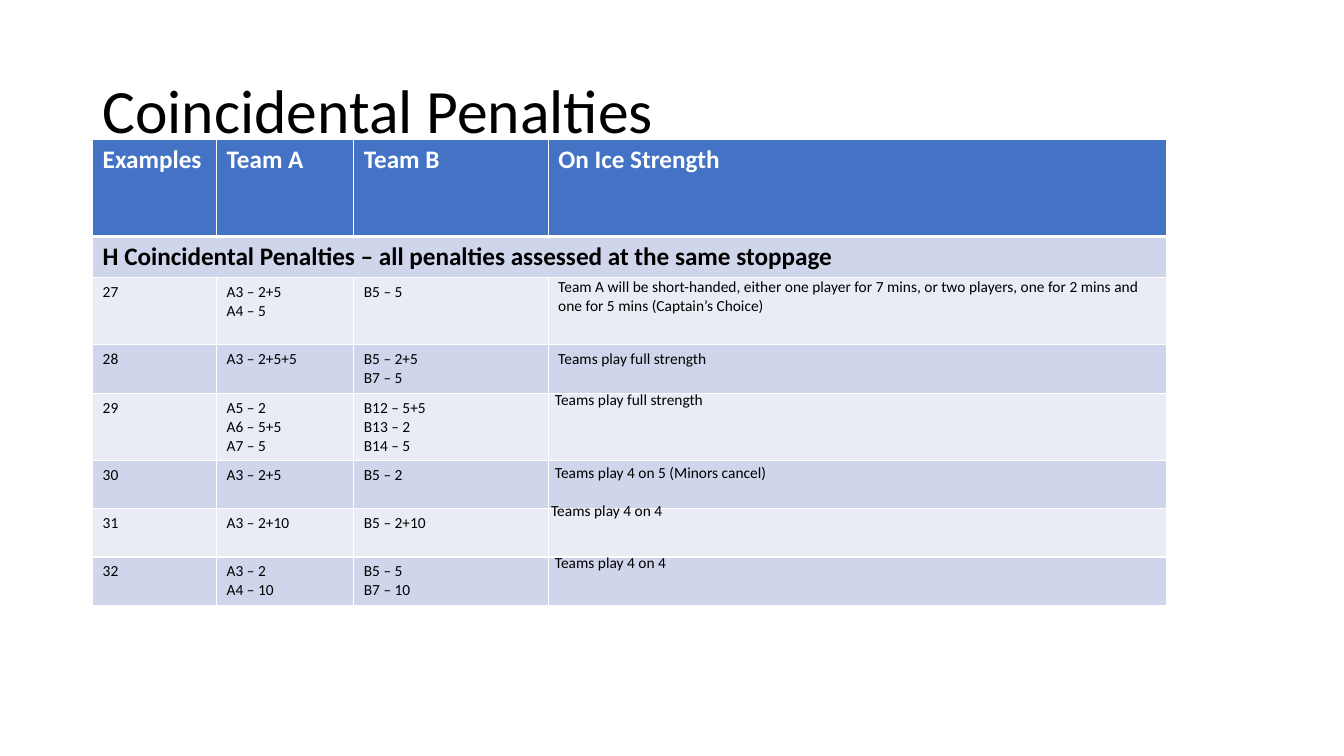
import pptx
import pptx.dml.color
import pptx.enum.text
import pptx.oxml
import pptx.oxml.ns
import pptx.util

Pt = pptx.util.Pt
BLACK, WHITE, BLUE = "000000", "FFFFFF", "4472C4"
BANDS = ["CFD5EA", "E9EBF5"]

HEADINGS = ["Examples", "Team A", "Team B", "On Ice Strength"]
SECTION = "H Coincidental Penalties – all penalties assessed at the same stoppage"
EXAMPLES = [
    ["27", "A3 – 2+5\nA4 – 5", "B5 – 5", ""],
    ["28", "A3 – 2+5+5", "B5 – 2+5\nB7 – 5", ""],
    ["29", "A5 – 2\nA6 – 5+5\nA7 – 5", "B12 – 5+5\nB13 – 2\nB14 – 5", ""],
    ["30", "A3 – 2+5", "B5 – 2", ""],
    ["31", "A3 – 2+10", "B5 – 2+10", ""],
    ["32", "A3 – 2\nA4 – 10", "B5 – 5\nB7 – 10", ""],
]
COLUMN_WIDTHS = [88.5, 98, 139, 441.4]
ROW_HEIGHTS = [69.5, 29.5, 48, 34.5, 48, 34.5, 34.5, 34.5]
STRENGTHS = [
    (391.7, 194.4, 34, "Team A will be short-handed, either one player for 7 mins, "
     "or two players, one for 2 mins and one for 5 mins (Captain’s Choice)"),
    (391.7, 245.5, 20.6, "Teams play full strength"),
    (389.3, 275, 20.6, "Teams play full strength"),
    (389.3, 326.9, 20.6, "Teams play 4 on 5 (Minors cancel)"),
    (386.6, 354.2, 20.6, "Teams play 4 on 4"),
    (389.3, 391.7, 20.6, "Teams play 4 on 4"),
]


def colour(value):
    return pptx.dml.color.RGBColor.from_string(value)


class SlideBuilder:
    def __init__(self, page, font):
        self.page = page
        self.font = font

    def format_text(self, frame, size, shade, bold=False):
        for para in frame.paragraphs:
            para.font.size = Pt(size)
            for span in para.runs:
                span.font.name = self.font
                span.font.size = Pt(size)
                span.font.bold = bold
                span.font.color.rgb = colour(shade)

    def text(self, left, top, width, height, wording, size):
        box = self.page.shapes.add_textbox(Pt(left), Pt(top), Pt(width), Pt(height))
        frame = box.text_frame
        frame.word_wrap = True
        frame.text = wording
        self.format_text(frame, size, BLACK)
        return frame

    def title(self, left, top, width, height, wording):
        frame = self.text(left, top, width, height, wording, 44)
        frame.vertical_anchor = pptx.enum.text.MSO_ANCHOR.MIDDLE
        frame.paragraphs[0].line_spacing = 0.9

    def note(self, left, top, width, height, wording):
        frame = self.text(left, top, width, height, wording, 11)
        frame.auto_size = pptx.enum.text.MSO_AUTO_SIZE.SHAPE_TO_FIT_TEXT

    def borders(self, cell, top, bottom):
        properties = cell._tc.get_or_add_tcPr()
        for side, width in (("L", 1), ("R", 1), ("T", top), ("B", bottom)):
            properties.append(pptx.oxml.parse_xml(
                f'<a:ln{side} {pptx.oxml.ns.nsdecls("a")} w="{Pt(width)}">'
                f'<a:solidFill><a:srgbClr val="{WHITE}"/></a:solidFill></a:ln{side}>'))

    def table(self, left, top, widths, heights, rows):
        table = self.page.shapes.add_table(
            len(heights), len(widths), Pt(left), Pt(top),
            Pt(sum(widths)), Pt(sum(heights))).table
        for column, width in zip(table.columns, widths):
            column.width = Pt(width)
        for row, height in zip(table.rows, heights):
            row.height = Pt(height)
        for r, row in enumerate(rows):
            for c, wording in enumerate(row):
                cell = table.cell(r, c)
                self.borders(cell, 3 if r == 1 else 1, 3 if r == 0 else 1)
                cell.fill.solid()
                cell.fill.fore_color.rgb = colour(BANDS[(r - 1) % 2] if r else BLUE)
                cell.text_frame.text = wording
                self.format_text(cell.text_frame, 18 if r < 2 else 11,
                                 BLACK if r else WHITE, r < 2)
        table.cell(1, 0).merge(table.cell(1, len(widths) - 1))


def main():
    deck = pptx.Presentation()
    deck.slide_width, deck.slide_height = Pt(960), Pt(540)
    page = deck.slides.add_slide(deck.slide_layouts[6])
    builder = SlideBuilder(page, "Calibri")
    builder.title(66.2, 28.8, 828, 104.4, "Coincidental Penalties")
    builder.table(66.2, 99.4, COLUMN_WIDTHS, ROW_HEIGHTS,
                  [HEADINGS, [SECTION, "", "", ""], *EXAMPLES])
    for left, top, height, wording in STRENGTHS:
        builder.note(left, top, 441.4, height, wording)
    deck.save("out.pptx")


if __name__ == "__main__":
    main()
